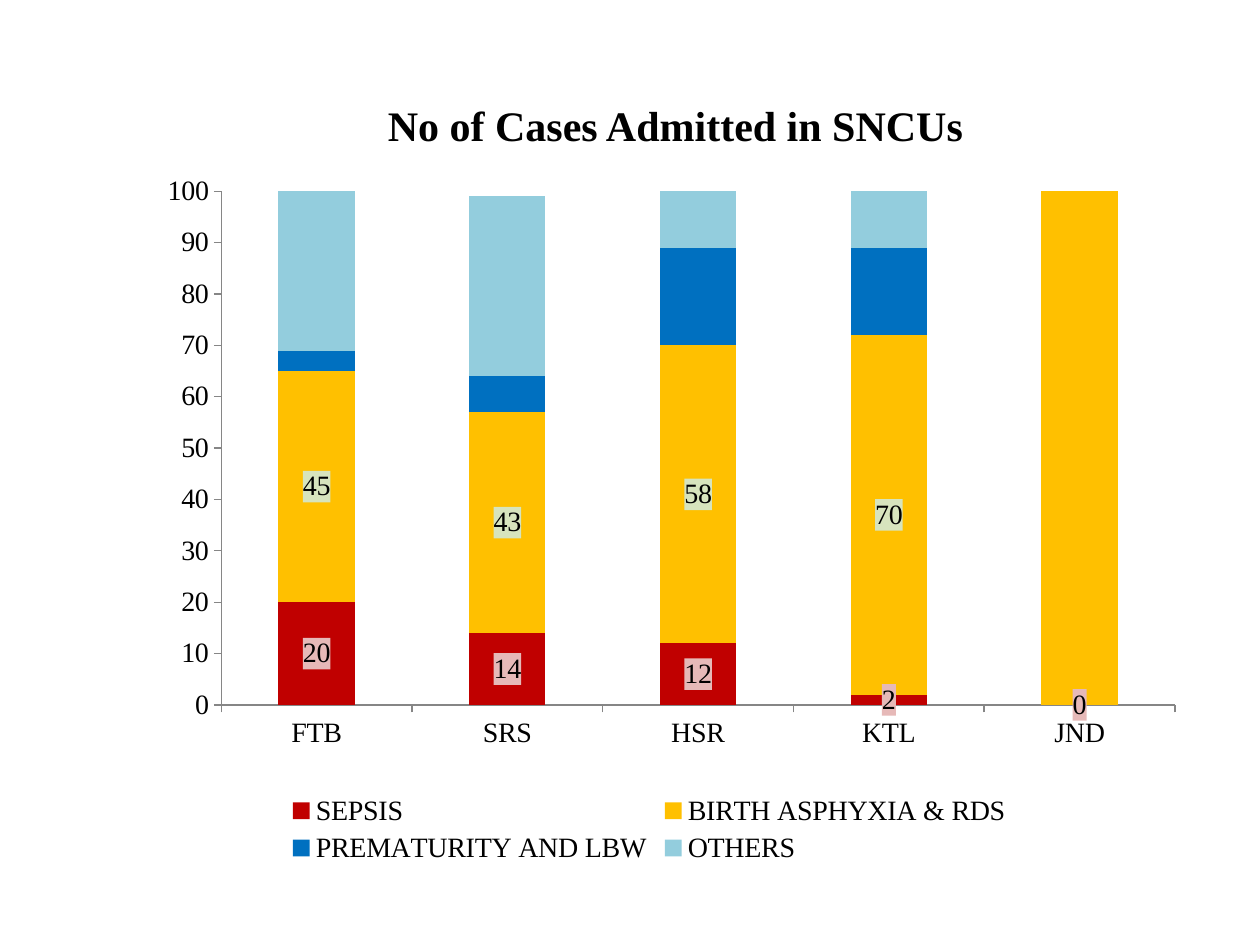
from lxml import etree
from pptx import Presentation
from pptx.chart.data import CategoryChartData
from pptx.dml.color import RGBColor
from pptx.enum import chart as charts, text
from pptx.oxml import parse_xml
from pptx.oxml.ns import nsdecls, qn
from pptx.util import Inches, Pt

FONT = "Times New Roman"
BLACK = RGBColor(0x00, 0x00, 0x00)
GREY = RGBColor(0x86, 0x86, 0x86)
RED = RGBColor(0xC0, 0x00, 0x00)
AMBER = RGBColor(0xFF, 0xC0, 0x00)
BLUE = RGBColor(0x00, 0x70, 0xC0)
PALE_BLUE = RGBColor(0x93, 0xCD, 0xDD)
PALE_RED = RGBColor(0xE6, 0xB9, 0xB8)
PALE_GREEN = RGBColor(0xD7, 0xE4, 0xBD)

HOSPITALS = ["FTB", "SRS", "HSR", "KTL", "JND"]
# Cause, values, bar colour, label background, positions without a label
CAUSES = [
    ("SEPSIS", (20, 14, 12, 2, 0), RED, PALE_RED, ()),
    ("BIRTH ASPHYXIA & RDS", (45, 43, 58, 70, 100), AMBER, PALE_GREEN, (4,)),
    ("PREMATURITY AND LBW", (4, 7, 19, 17, 0), BLUE, None, ()),
    ("OTHERS", (32, 35, 11, 11, 0), PALE_BLUE, None, ()),
]


class SlideBuilder:
    """Holds the slide and its style; boxes are shares of the slide size."""

    def __init__(self, presentation):
        self.width = presentation.slide_width
        self.height = presentation.slide_height
        self.slide = presentation.slides.add_slide(presentation.slide_layouts[5])

    def box(self, left, top, width, height):
        return (int(left * self.width), int(top * self.height),
                int(width * self.width), int(height * self.height))

    def style(self, font, size, bold=False):
        font.name, font.size, font.bold = FONT, Pt(size), bold
        font.color.rgb = BLACK

    def title(self, words, *shares):
        shape = self.slide.shapes.title
        shape.left, shape.top, shape.width, shape.height = self.box(*shares)
        frame = shape.text_frame
        frame.text = words
        frame.vertical_anchor = text.MSO_ANCHOR.MIDDLE
        paragraph = frame.paragraphs[0]
        paragraph.alignment = text.PP_ALIGN.CENTER
        self.style(paragraph.runs[0].font, 24, bold=True)

    def stacked_chart(self, categories, rows, *shares):
        data = CategoryChartData(number_format="0")
        data.categories = categories
        for name, values, *_ in rows:
            data.add_series(name, values)
        chart = self.slide.shapes.add_chart(
            charts.XL_CHART_TYPE.COLUMN_STACKED, *self.box(*shares), data).chart
        chart.has_title = False
        self.style(chart.font, 16)
        plot = chart.plots[0]
        plot.overlap, plot.gap_width = 100, 150

        for series, (_, _, colour, background, hidden) in zip(plot.series, rows):
            series.format.fill.solid()
            series.format.fill.fore_color.rgb = colour
            if background is not None:
                self.value_labels(series, background, hidden)

        # Axes
        for axis in (chart.category_axis, chart.value_axis):
            axis.has_major_gridlines = False
            axis.major_tick_mark = charts.XL_TICK_MARK.OUTSIDE
            axis.format.line.color.rgb = GREY
            axis.format.line.width = Pt(0.75)
        chart.value_axis.minimum_scale = 0
        chart.value_axis.maximum_scale = 100
        chart.value_axis.major_unit = 10
        chart.value_axis.tick_labels.number_format = "0"
        chart.value_axis.tick_labels.number_format_is_linked = False

        # Legend
        chart.has_legend = True
        chart.legend.position = charts.XL_LEGEND_POSITION.BOTTOM
        chart.legend.include_in_layout = False
        return chart

    def value_labels(self, series, background, hidden):
        labels = series.data_labels
        labels.show_value = True
        labels.number_format = "0"
        labels.number_format_is_linked = False
        labels.position = charts.XL_LABEL_POSITION.CENTER
        self.style(labels.font, 16)
        element = labels._element
        element.find(qn("c:numFmt")).addnext(parse_xml(
            f'<c:spPr {nsdecls("c", "a")}><a:solidFill>'
            f'<a:srgbClr val="{background}"/></a:solidFill></c:spPr>'))
        for position in hidden:
            element.insert(0, parse_xml(
                f'<c:dLbl {nsdecls("c")}><c:idx val="{position}"/>'
                '<c:delete val="1"/></c:dLbl>'))

    def place_plot(self, chart, x, y, w, h):
        area = chart._chartSpace.find(".//" + qn("c:plotArea"))
        for old in area.findall(qn("c:layout")):
            area.remove(old)
        layout = parse_xml(f'<c:layout {nsdecls("c")}><c:manualLayout/></c:layout>')
        settings = {"layoutTarget": "inner", "xMode": "edge", "yMode": "edge",
                    "x": x, "y": y, "w": w, "h": h}
        for name, value in settings.items():
            etree.SubElement(layout[0], qn(f"c:{name}")).set("val", str(value))
        area.insert(0, layout)


def main():
    presentation = Presentation()
    presentation.slide_width, presentation.slide_height = Inches(10), Inches(7.5)
    builder = SlideBuilder(presentation)
    chart = builder.stacked_chart(HOSPITALS, CAUSES, 0.098, 0.164, 0.835, 0.756)
    builder.place_plot(chart, 0.093, 0.051, 0.907, 0.719)
    builder.title("No of Cases Admitted in SNCUs", 0.237, 0.098, 0.598, 0.067)
    presentation.save("out.pptx")


if __name__ == "__main__":
    main()
